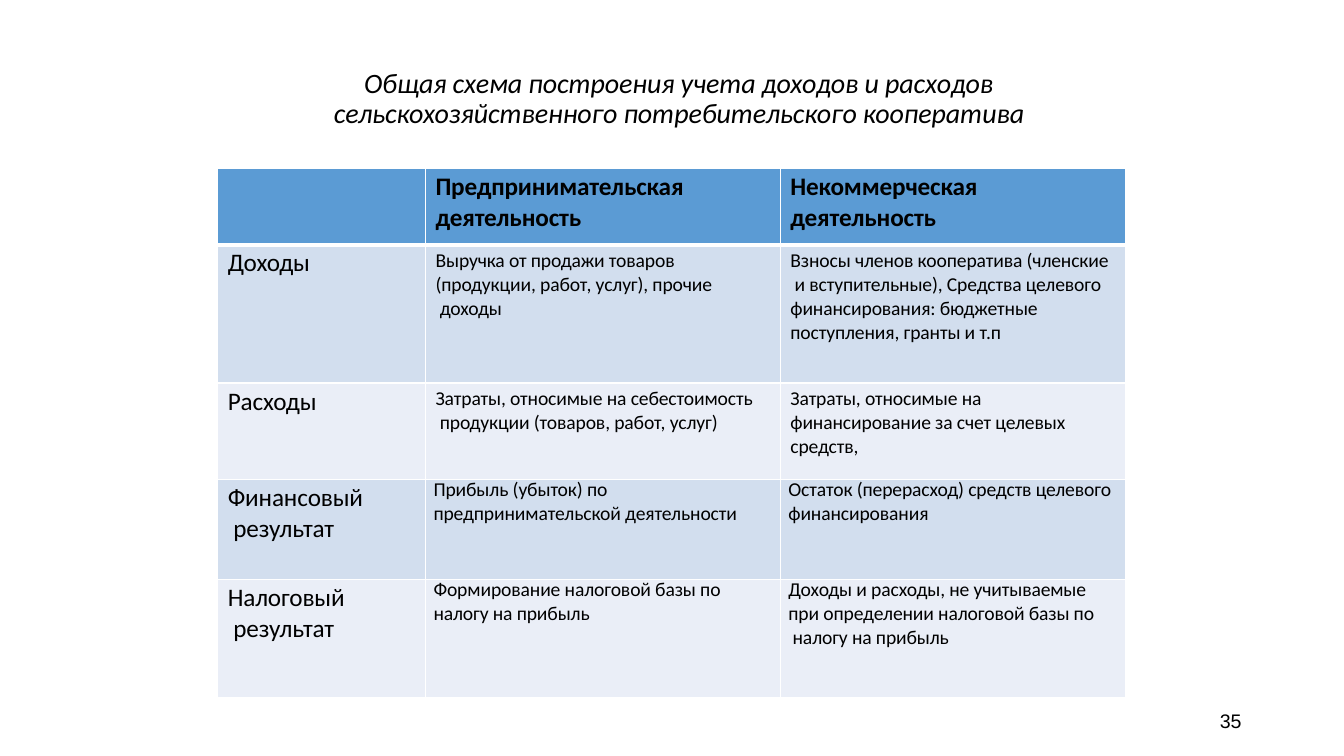
from lxml.etree import SubElement
from pptx import Presentation
from pptx.dml.color import RGBColor
from pptx.enum.text import MSO_ANCHOR as Anchor, MSO_AUTO_SIZE as Auto, PP_ALIGN as Align
from pptx.oxml.ns import qn
from pptx.util import Inches, Pt


def color(code):
    return RGBColor.from_string(code)


def style(para, size, face="Calibri", bold=False, italic=False):
    para.alignment = Align.LEFT
    for run in para.runs:
        font = run.font
        font.size, font.name = Pt(size), face
        font.bold, font.italic = bold, italic
        font.color.rgb = color("000000")
        run._r.get_or_add_rPr().set("spc", "-10")


deck = Presentation()
deck.slide_width, deck.slide_height = Inches(13.33), Inches(7.5)
slide = deck.slides.add_slide(deck.slide_layouts[5])

title = slide.shapes.title
title.left, title.top = Inches(1.02), Inches(0.34)
title.width, title.height = Inches(11.3), Inches(1.42)
frame = title.text_frame
frame.text = (
    "Общая схема построения учета доходов и расходов \v"
    "сельскохозяйственного потребительского кооператива"
)
frame.auto_size = Auto.NONE
frame.vertical_anchor = Anchor.TOP
frame.margin_left = frame.margin_right = frame.margin_bottom = 0
frame.margin_top = Inches(0.34)
para = frame.paragraphs[0]
para.line_spacing, para.space_before = Pt(21.6), Pt(3.8)
props = para._p.get_or_add_pPr()
props.set("marL", str(Inches(2.29)))
props.set("indent", str(Inches(0.3)))
style(para, 20, italic=True)

rows = [
    ("", "Предпринимательская\nдеятельность", "Некоммерческая\nдеятельность"),
    (
        "Доходы",
        "Выручка от продажи товаров\n(продукции, работ, услуг), прочие\v доходы",
        "Взносы членов кооператива (членские\v и вступительные), Средства целевого \v"
        "финансирования: бюджетные\nпоступления, гранты и т.п",
    ),
    (
        "Расходы",
        "Затраты, относимые на себестоимость\v продукции (товаров, работ, услуг)",
        "Затраты, относимые на\nфинансирование за счет целевых\nсредств,",
    ),
    (
        "Финансовый\v результат",
        "Прибыль (убыток) по\nпредпринимательской деятельности",
        "Остаток (перерасход) средств целевого\nфинансирования",
    ),
    (
        "Налоговый\v результат",
        "Формирование налоговой базы по\nналогу на прибыль",
        "Доходы и расходы, не учитываемые\n"
        "при определении налоговой базы по\v налогу на прибыль",
    ),
]
widths = [2.06, 3.52, 3.42]
heights = [0.76, 1.37, 0.96, 0.99, 1.17]
fills = ["5B9BD4", "D2DEEE", "EAEEF7", "D2DEEE", "EAEEF7"]

table = slide.shapes.add_table(
    5, 3, Inches(2.16), Inches(1.67), Inches(9), Inches(5.25)
).table
for col, width in zip(table.columns, widths):
    col.width = Inches(width)
for row, height in zip(table.rows, heights):
    row.height = Inches(height)

for r, texts in enumerate(rows):
    for c, text in enumerate(texts):
        cell = table.cell(r, c)
        head = r == 0
        tight = r > 2 and c > 0
        large = head or c == 0
        cell.margin_left = Inches(0.08 if tight else 0.1)
        cell.margin_right = cell.margin_bottom = 0
        cell.margin_top = Inches(0 if tight else 0.03 if large else 0.04)
        cell.vertical_anchor = Anchor.TOP
        for side in ("L", "R", "T", "B"):
            thick = (head and side == "B") or (r == 1 and side == "T")
            line = SubElement(cell._tc.get_or_add_tcPr(), qn("a:ln" + side))
            line.set("w", str(Pt(3 if thick else 1)))
            SubElement(SubElement(line, qn("a:solidFill")), qn("a:srgbClr")).set("val", "FFFFFF")
        cell.fill.solid()
        cell.fill.fore_color.rgb = color(fills[r])
        cell.text_frame.text = text
        paras = cell.text_frame.paragraphs
        for para in paras:
            style(para, 18 if large else 14, bold=head)
        if tight:
            paras[0].line_spacing = Pt(16)
        else:
            paras[0].space_before = Pt(2.5)

box = slide.shapes.add_textbox(Inches(12.09), Inches(7.02), Inches(0.24), Inches(0.26))
frame = box.text_frame
frame.text = "35"
frame.word_wrap = True
frame.margin_left = frame.margin_top = Inches(0.01)
frame.margin_right = frame.margin_bottom = 0
frame.paragraphs[0].space_before = Pt(1.1)
style(frame.paragraphs[0], 14, face="Arial")

deck.save("out.pptx")
